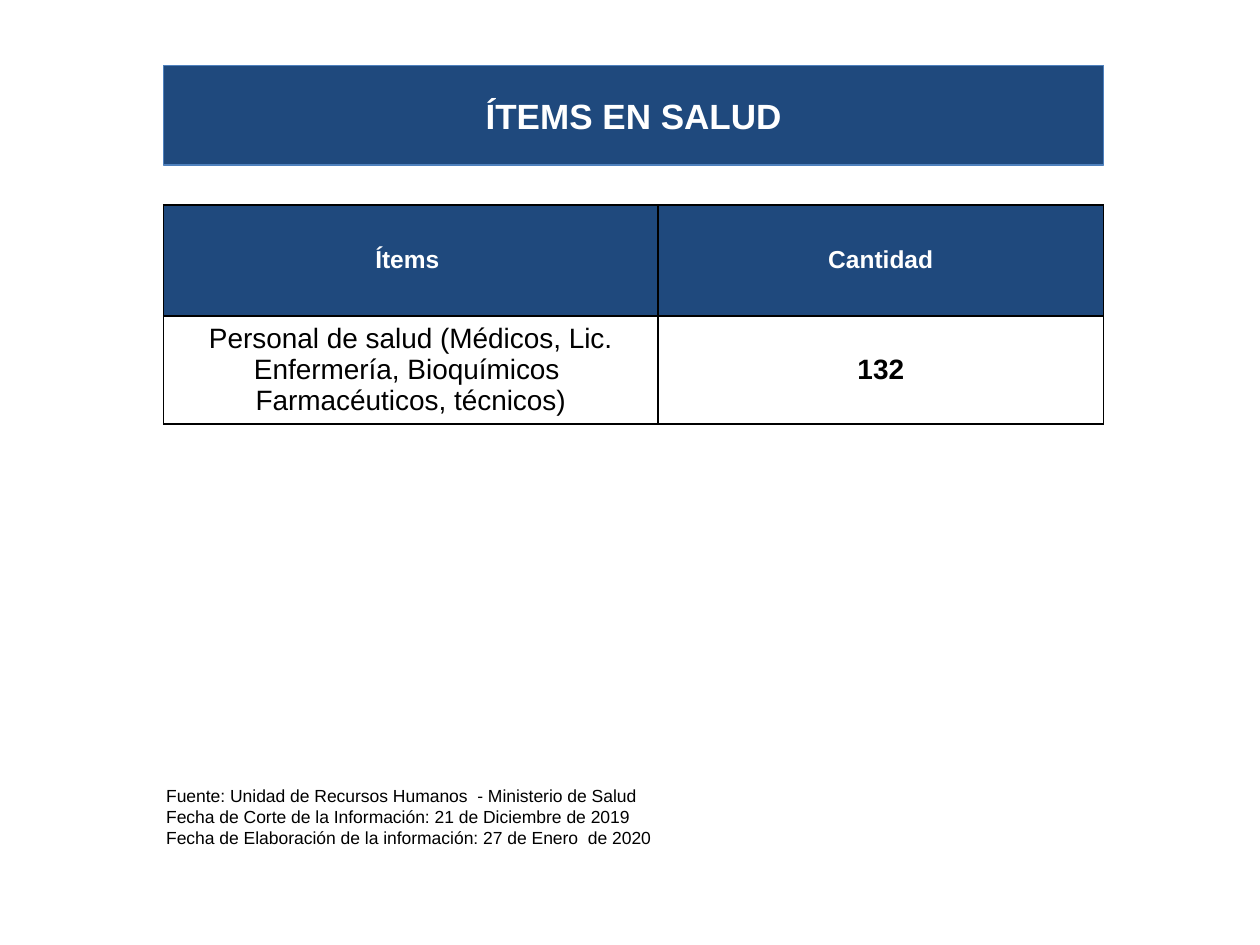
from dataclasses import dataclass

import lxml.etree
import pptx
import pptx.dml.color
import pptx.enum.shapes
import pptx.enum.text
import pptx.oxml.ns
import pptx.util

Cm, Pt = pptx.util.Cm, pptx.util.Pt
RGB = pptx.dml.color.RGBColor.from_string
CENTER = pptx.enum.text.PP_ALIGN.CENTER
MIDDLE = pptx.enum.text.MSO_ANCHOR.MIDDLE


@dataclass(frozen=True)
class Theme:
    font: str = "Arial"
    navy: str = "1F497D"
    outline: str = "4F81BD"
    white: str = "FFFFFF"
    black: str = "000000"
    title_size: int = 20
    header_size: int = 14
    body_size: int = 16
    source_size: int = 10


theme = Theme()


def style(paragraph, size, color, bold=False, align=None):
    paragraph.font.name = theme.font
    paragraph.font.size = Pt(size)
    paragraph.font.bold = bold
    paragraph.font.color.rgb = RGB(color)
    paragraph.alignment = align


def add_borders(cell, color, width):
    properties = cell._tc.get_or_add_tcPr()
    qn = pptx.oxml.ns.qn
    # Borders must come before the cell fill
    for position, side in enumerate(("a:lnL", "a:lnR", "a:lnT", "a:lnB")):
        border = lxml.etree.Element(qn(side), w=str(Pt(width)))
        solid = lxml.etree.SubElement(border, qn("a:solidFill"))
        lxml.etree.SubElement(solid, qn("a:srgbClr"), val=color)
        properties.insert(position, border)


presentation = pptx.Presentation()
presentation.slide_width = Cm(25.4)
presentation.slide_height = Cm(19.05)
slide = presentation.slides.add_slide(presentation.slide_layouts[6])

left, width = Cm(3.3), Cm(18.95)

# Title banner
banner = slide.shapes.add_shape(
    pptx.enum.shapes.MSO_SHAPE.RECTANGLE, left, Cm(1.32), width, Cm(2.01))
banner.shadow.inherit = False
banner.fill.solid()
banner.fill.fore_color.rgb = RGB(theme.navy)
banner.line.color.rgb = RGB(theme.outline)
banner.line.width = Pt(0.75)
banner.text_frame.vertical_anchor = MIDDLE
banner.text_frame.text = "ÍTEMS EN SALUD"
style(banner.text_frame.paragraphs[0], theme.title_size, theme.white, True, CENTER)

# Table of health posts
rows = [
    ("Ítems ", "Cantidad"),
    ("Personal de salud (Médicos, Lic. Enfermería, Bioquímicos  Farmacéuticos, técnicos)", "132"),
]
items = slide.shapes.add_table(2, 2, left, Cm(4.13), width, Cm(4.42)).table
for column, column_width in zip(items.columns, (9.96, 8.99)):
    column.width = Cm(column_width)
for row, row_height in zip(items.rows, (2.24, 2.18)):
    row.height = Cm(row_height)

for r, texts in enumerate(rows):
    for c, text in enumerate(texts):
        header = r == 0
        cell = items.cell(r, c)
        cell.text = text
        cell.vertical_anchor = MIDDLE
        cell.margin_left = cell.margin_right = Cm(0.18)
        cell.margin_top = cell.margin_bottom = Cm(0.1)
        if header:
            cell.fill.solid()
            cell.fill.fore_color.rgb = RGB(theme.navy)
        else:
            cell.fill.background()
        style(cell.text_frame.paragraphs[0],
              theme.header_size if header else theme.body_size,
              theme.white if header else theme.black,
              header or c == 1, CENTER)
        add_borders(cell, theme.black, 1)

# Source and dates
source = slide.shapes.add_textbox(Cm(3.1), Cm(15.7), Cm(17.07), Cm(1.55)).text_frame
source.word_wrap = True
source.auto_size = pptx.enum.text.MSO_AUTO_SIZE.SHAPE_TO_FIT_TEXT
source.text = "\n".join([
    "Fuente: Unidad de Recursos Humanos  - Ministerio de Salud",
    "Fecha de Corte de la Información: 21 de Diciembre de 2019",
    "Fecha de Elaboración de la información: 27 de Enero  de 2020",
])
for paragraph in source.paragraphs:
    style(paragraph, theme.source_size, theme.black)

presentation.save("out.pptx")
